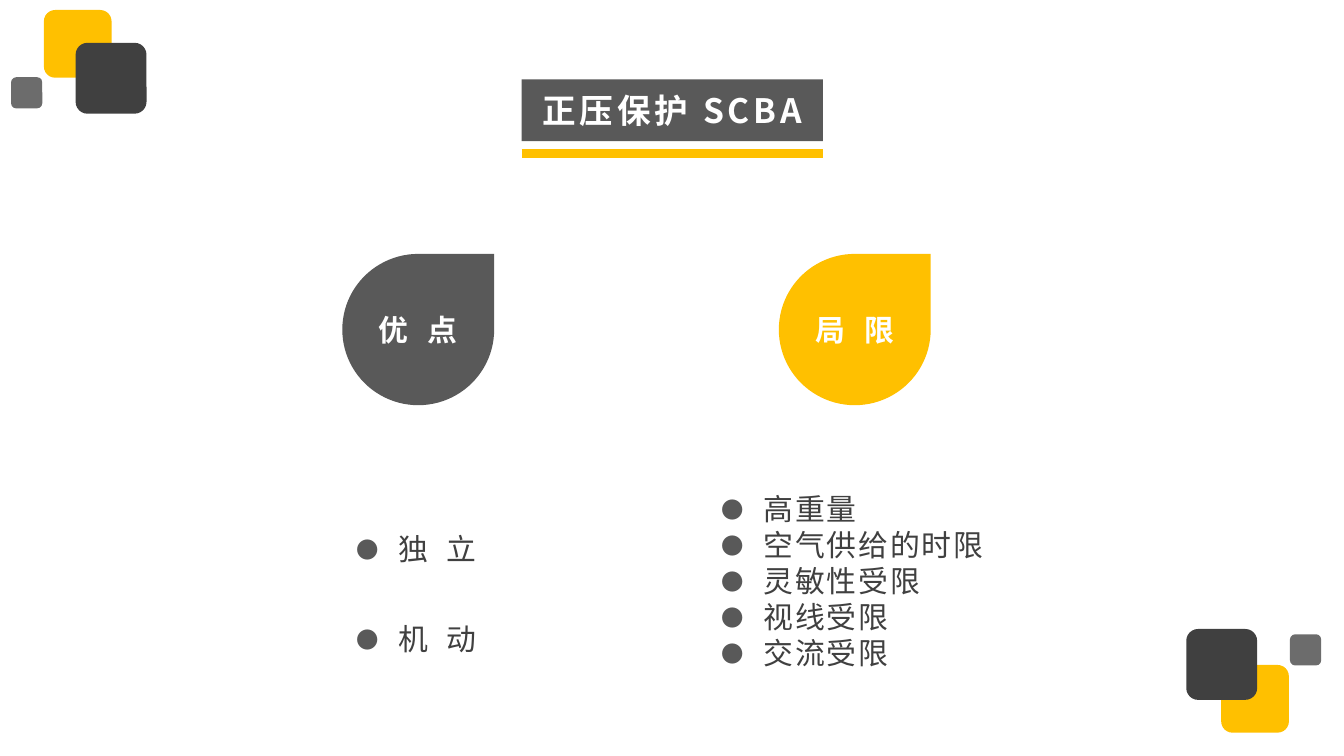
from lxml.etree import SubElement
from pptx import Presentation
from pptx.dml.color import RGBColor
from pptx.enum.shapes import MSO_CONNECTOR, MSO_SHAPE
from pptx.enum.text import MSO_ANCHOR, MSO_AUTO_SIZE, PP_ALIGN
from pptx.oxml.ns import qn
from pptx.util import Cm, Pt

FONT = "Noto Sans CJK SC"
COLORS = {"yellow": "FFC000", "dark": "404040", "gray": "595959", "white": "FFFFFF"}
# Each corner square: left, top, side (cm), colour, opacity (%)
CORNER_SQUARES = [
    (0.83, 0.19, 1.28, "yellow", 100),
    (1.43, 0.81, 1.34, "dark", 100),
    (0.21, 1.46, 0.59, "dark", 77),
    (23.08, 12.57, 1.28, "yellow", 100),
    (22.42, 11.89, 1.34, "dark", 100),
    (24.38, 11.99, 0.59, "dark", 77),
]


def rgb(name):
    return RGBColor.from_string(COLORS[name])


def place(sp, left, top, width, height):
    sp.left, sp.top, sp.width, sp.height = Cm(left), Cm(top), Cm(width), Cm(height)


def add_run(p, text, size, color, bold=False, spacing=1):
    """Add a run; spacing is the extra gap between letters in points."""
    r = p.add_run()
    r.text = text
    r.font.size = Pt(size)
    r.font.bold = bold
    r.font.name = FONT
    r.font.color.rgb = rgb(color)
    rPr = r.font._element
    rPr.set("spc", str(spacing * 100))
    SubElement(rPr, qn("a:ea")).set("typeface", FONT)


def set_bullet(p):
    pPr = p._p.get_or_add_pPr()
    pPr.set("marL", str(Cm(0.79)))
    pPr.set("indent", str(-Cm(0.79)))
    color = SubElement(pPr, qn("a:buClr"))
    SubElement(color, qn("a:srgbClr")).set("val", COLORS["gray"])
    SubElement(pPr, qn("a:buSzPct")).set("val", "75000")
    SubElement(pPr, qn("a:buFont")).set("typeface", FONT)
    SubElement(pPr, qn("a:buChar")).set("char", "●")


def add_filled(s, shape_type, left, top, width, height, color):
    sp = s.shapes.add_shape(shape_type, Cm(left), Cm(top), Cm(width), Cm(height))
    sp.shadow.inherit = False
    sp.fill.solid()
    sp.fill.fore_color.rgb = rgb(color)
    sp.line.fill.background()
    return sp


def add_corner_square(s, left, top, side, color, opacity):
    sp = add_filled(s, MSO_SHAPE.ROUNDED_RECTANGLE, left, top, side, side, color)
    if opacity < 100:
        clr = sp._element.spPr.find(".//" + qn("a:srgbClr"))
        SubElement(clr, qn("a:alpha")).set("val", str(opacity * 1000))


def set_title(s, text):
    sp = s.shapes.title
    place(sp, 9.86, 1.5, 5.69, 1.17)
    sp.fill.solid()
    sp.fill.fore_color.rgb = rgb("gray")
    tf = sp.text_frame
    tf.auto_size = MSO_AUTO_SIZE.NONE
    tf.vertical_anchor = MSO_ANCHOR.MIDDLE
    tf.margin_left = tf.margin_right = Cm(0.1)
    tf.margin_top = tf.margin_bottom = Cm(0.1)
    p = tf.paragraphs[0]
    p.alignment = PP_ALIGN.CENTER
    add_run(p, text, 18, "white", bold=True, spacing=2)


def add_underline(s):
    line = s.shapes.add_connector(
        MSO_CONNECTOR.STRAIGHT, Cm(9.86), Cm(2.9), Cm(15.55), Cm(2.9))
    line.line.color.rgb = rgb("yellow")
    line.line.width = Pt(5)
    SubElement(line._element.spPr, qn("a:effectLst"))


def add_drop(s, left, text, color):
    sp = add_filled(s, MSO_SHAPE.TEAR, left, 4.8, 2.87, 2.86, color)
    tf = sp.text_frame
    tf.word_wrap = False
    tf.vertical_anchor = MSO_ANCHOR.MIDDLE
    p = tf.paragraphs[0]
    p.alignment = PP_ALIGN.CENTER
    add_run(p, text, 16, color="white", bold=True)


def fill_list(sp, box, items, pitch):
    """Place a body placeholder and fill it; pitch is the line height in points."""
    place(sp, *box)
    tf = sp.text_frame
    tf.auto_size = MSO_AUTO_SIZE.NONE
    tf.word_wrap = True
    for i, item in enumerate(items):
        p = tf.add_paragraph() if i else tf.paragraphs[0]
        p.alignment = PP_ALIGN.JUSTIFY
        p.line_spacing = Pt(pitch)
        p.space_before = Pt(0)
        set_bullet(p)
        add_run(p, item, 16, "dark")


def main():
    prs = Presentation()
    prs.slide_width, prs.slide_height = Cm(25.4), Cm(14.29)
    s = prs.slides.add_slide(prs.slide_layouts[3])

    for square in CORNER_SQUARES:
        add_corner_square(s, *square)

    set_title(s, "正压保护 SCBA")
    add_underline(s)

    add_drop(s, 6.47, "优  点", "gray")
    add_drop(s, 14.72, "局  限", "yellow")
    fill_list(s.placeholders[1], (6.48, 8.89, 2.95, 3.38),
              ["独  立", "机  动"], 48.2)
    fill_list(s.placeholders[2], (13.39, 9.14, 5.56, 3.68),
              ["高重量", "空气供给的时限", "灵敏性受限", "视线受限", "交流受限"], 19.3)

    prs.save("out.pptx")


if __name__ == "__main__":
    main()
